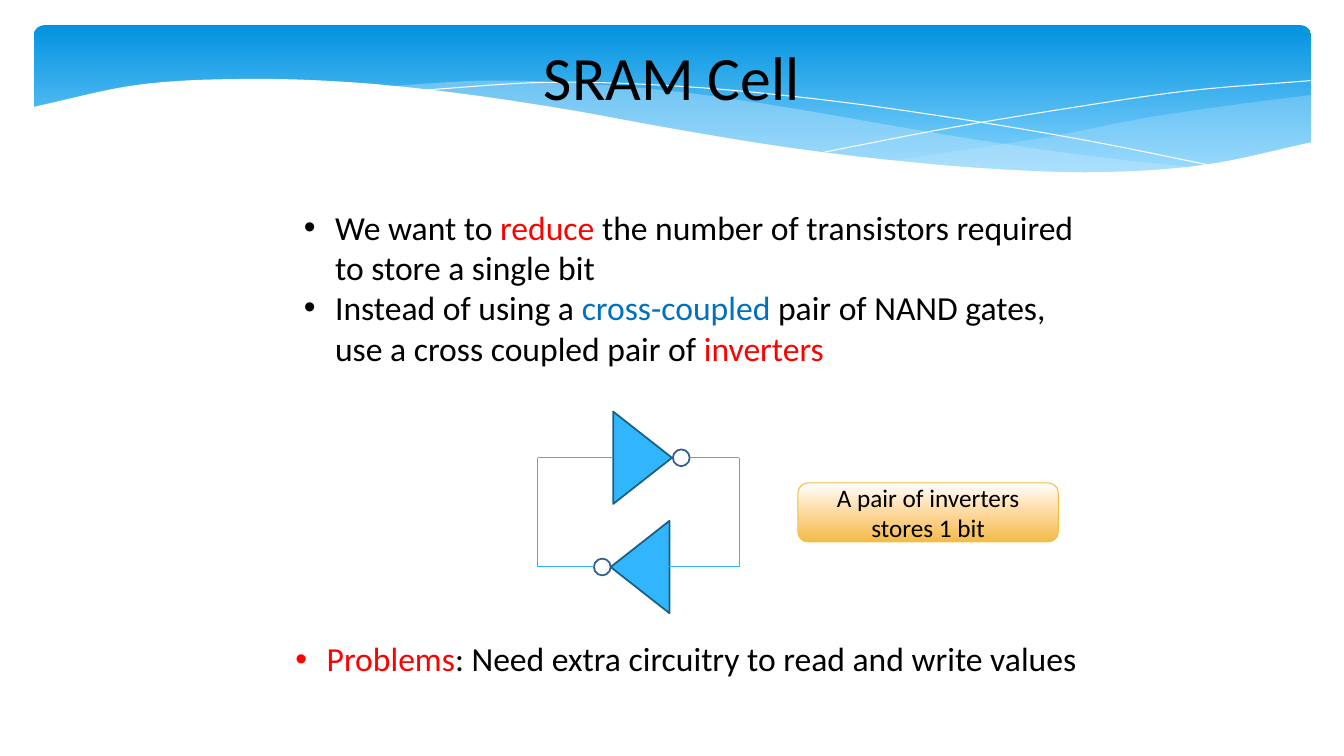
from lxml import etree
from pptx import Presentation
from pptx.dml.color import RGBColor
from pptx.enum.shapes import MSO_CONNECTOR, MSO_SHAPE
from pptx.enum.text import MSO_ANCHOR, MSO_AUTO_SIZE, PP_ALIGN
from pptx.oxml.ns import qn
from pptx.util import Emu, Inches, Pt

TRIANGLE = MSO_SHAPE.ISOSCELES_TRIANGLE
CIRCLE = MSO_SHAPE.OVAL
ROUNDED = MSO_SHAPE.ROUNDED_RECTANGLE
STRAIGHT = MSO_CONNECTOR.STRAIGHT
MIDDLE = MSO_ANCHOR.MIDDLE
TOP = MSO_ANCHOR.TOP
CENTER = PP_ALIGN.CENTER
LEFT = PP_ALIGN.LEFT
NO_AUTOFIT = MSO_AUTO_SIZE.NONE

COLUMNS, ROWS = 160, 90
CELL = Inches(1 / 12)
FONT = "Calibri"
BULLET_INDENT = Inches(0.31)
CURVE_STEPS = 8
COLORS = {
    "black": "000000", "white": "FFFFFF", "red": "FF0000", "blue": "0070C0",
    "sky": "31B6FD", "sky edge": "195F84", "bubble edge": "315D95",
    "mist": "C6E7FC", "band top": "0293E0", "band bottom": "83D3FE",
    "peach": "FFDDAA", "amber": "F4BB4A", "amber edge": "F5C040",
}


def cells(*counts):
    return [Emu(round(count * CELL)) for count in counts]


def color(name):
    return RGBColor.from_string(COLORS[name])


def set_attributes(target, formats):
    for name, value in formats.items():
        setattr(target, name, value)


def paint(shape, fill=None, line=None, width=0, opacity=100):
    shape.shadow.inherit = False
    if fill:
        shape.fill.solid()
        shape.fill.fore_color.rgb = color(fill)
        if opacity < 100:
            value = shape._element.spPr.find(qn("a:solidFill"))[0]
            etree.SubElement(value, qn("a:alpha"), val=str(opacity * 1000))
    else:
        shape.fill.background()
    if line:
        shape.line.width = Pt(width)
        shape.line.color.rgb = color(line)
    else:
        shape.line.fill.background()


def paint_gradient(shape, stops):
    shape.fill.gradient()
    gradient = shape._element.spPr.find(qn("a:gradFill"))
    for child in list(gradient):
        gradient.remove(child)
    stop_list = etree.SubElement(gradient, qn("a:gsLst"))
    for position, name in stops:
        stop = etree.SubElement(stop_list, qn("a:gs"), pos=str(position * 1000))
        etree.SubElement(stop, qn("a:srgbClr"), val=COLORS[name])
    etree.SubElement(gradient, qn("a:lin"), ang="5400000", scaled="0")


def curve_points(first_column, last_column, heights):
    spacing = (last_column - first_column) / (len(heights) - 1)
    before_first = 2 * heights[0] - heights[1]
    after_last = 2 * heights[-1] - heights[-2]
    padded = [before_first, *heights, after_last]
    slopes = [(after - before) / 2 for before, after in zip(padded, padded[2:])]
    points = [(first_column, heights[0])]
    for index in range(len(heights) - 1):
        start, end = heights[index:index + 2]
        start_slope, end_slope = slopes[index:index + 2]
        for step in range(1, CURVE_STEPS + 1):
            t = step / CURVE_STEPS
            blend = t * t * (3 - 2 * t)
            bend = t * (1 - t) * ((1 - t) * start_slope - t * end_slope)
            row = start + (end - start) * blend + bend
            points.append((first_column + (index + t) * spacing, row))
    return points


def add_outline(slide, points, closed, **look):
    corners = [cells(*point) for point in points]
    builder = slide.shapes.build_freeform(*corners[0])
    builder.add_line_segments(corners[1:], close=closed)
    paint(builder.convert_to_shape(), **look)


def add_wave(slide, first_column, last_column, upper, lower, **look):
    top_edge = curve_points(first_column, last_column, upper)
    bottom_edge = curve_points(first_column, last_column, lower)
    add_outline(slide, top_edge + bottom_edge[::-1], True, **look)


def add_hairline(slide, first_column, last_column, heights):
    add_outline(slide, curve_points(first_column, last_column, heights), False, line="white")


def add_preset(slide, kind, box, rotation=0, **look):
    shape = slide.shapes.add_shape(kind, *cells(*box))
    shape.rotation = rotation
    paint(shape, **look)
    return shape


def add_wire(slide, start, end):
    wire = slide.shapes.add_connector(STRAIGHT, *cells(*start, *end))
    wire.line.width = Pt(0.75)
    wire.line.color.rgb = color("sky")
    etree.SubElement(wire._element.spPr, qn("a:effectLst"))


def write_paragraph(paragraph, lines, size, alignment):
    paragraph.alignment = alignment
    for index, line in enumerate(lines):
        if index:
            paragraph.add_line_break()
        for text, color_name in line:
            run = paragraph.add_run()
            run.text = text
            set_attributes(run.font, {"name": FONT, "size": Pt(size)})
            run.font.color.rgb = color(color_name)


def add_bullets(slide, box, items):
    frame = slide.shapes.add_textbox(*cells(*box)).text_frame
    frame.word_wrap = True
    for index, lines in enumerate(items):
        paragraph = frame.add_paragraph() if index else frame.paragraphs[0]
        write_paragraph(paragraph, lines, 24, LEFT)
        properties = paragraph._p.get_or_add_pPr()
        properties.set("marL", str(BULLET_INDENT))
        properties.set("indent", str(-BULLET_INDENT))
        etree.SubElement(properties, qn("a:buFont"), typeface="Arial")
        etree.SubElement(properties, qn("a:buChar"), char="•")


def add_banner(slide):
    band = add_preset(slide, ROUNDED, (4, 3, 152.1, 18.7))
    band.adjustments[0] = 0.07
    paint_gradient(band, [(0, "band top"), (90, "band bottom")])
    add_wave(slide, 105.8, 156.1, upper=[19.2, 17.7, 16.1, 14.1, 12.6, 11.3],
             lower=[19.2, 20.2, 20.6, 20.5, 19.5, 17], fill="mist", opacity=29)
    add_wave(slide, 45.8, 142.8, upper=[10.3, 9.6, 10, 11.1, 12.9, 15, 17, 18.7, 20],
             lower=[10.3, 11.8, 13.6, 15.7, 17.8, 19.3, 20.3, 20.7, 20],
             fill="mist", opacity=40)
    add_hairline(slide, 49.4, 145.2, [10.8, 9.8, 10.3, 11.8, 14, 16.7, 19.9])
    add_hairline(slide, 98.2, 156, [18.1, 15.3, 12.9, 10.8, 9.6])
    add_wave(slide, 3.7, 156.3, lower=[26.9, 26.9], fill="white",
             upper=[12.8, 10.1, 9.4, 9.8, 11.1, 13, 15.3, 17.4, 19, 20.1, 20.5, 19.6, 16.9])


def place_title(slide, box, text):
    title = slide.shapes.title
    set_attributes(title, dict(zip(("left", "top", "width", "height"), cells(*box))))
    frame = title.text_frame
    set_attributes(frame, {"auto_size": NO_AUTOFIT, "word_wrap": True, "vertical_anchor": TOP})
    write_paragraph(frame.paragraphs[0], [[(text, "black")]], 44, CENTER)
    title._element.getparent().append(title._element)


def add_inverter(slide, triangle_left, bubble_left, row, rotation):
    add_preset(slide, TRIANGLE, (triangle_left, row - 3.5, 11, 7), rotation,
               fill="sky", line="sky edge", width=1.25)
    add_preset(slide, CIRCLE, (bubble_left, row - 1, 2, 2),
               fill="white", line="bubble edge", width=1.25)


def add_inverter_loop(slide):
    left, right, upper, lower = 64, 88, 54.5, 67.5
    add_inverter(slide, 71, 80.1, upper, rotation=90)
    add_inverter(slide, 70.7, 70.7, lower, rotation=270)
    left_route = [(70.7, lower), (left, lower), (left, upper), (73, upper)]
    right_route = [(82.1, upper), (right, upper), (right, lower), (79.7, lower)]
    for route in (left_route, right_route):
        for start, end in zip(route, route[1:]):
            add_wire(slide, start, end)


def add_label(slide, box, text):
    label = add_preset(slide, ROUNDED, box, line="amber edge", width=0.75)
    paint_gradient(label, [(0, "white"), (44, "peach"), (100, "amber")])
    set_attributes(label.text_frame, {"word_wrap": True, "vertical_anchor": MIDDLE})
    write_paragraph(label.text_frame.paragraphs[0], [[(text, "black")]], 18, CENTER)


def main():
    presentation = Presentation()
    set_attributes(presentation, {"slide_width": COLUMNS * CELL, "slide_height": ROWS * CELL})
    slide = presentation.slides.add_slide(presentation.slide_layouts.get_by_name("Title Only"))
    add_banner(slide)
    place_title(slide, (23, 4, 114, 10), "SRAM Cell")
    goal = [[("We want to ", "black"), ("reduce", "red"),
             (" the number of transistors required ", "black")],
            [("to store a single bit", "black")]]
    method = [[("Instead of using a ", "black"), ("cross-coupled", "blue"),
               (" pair of NAND gates,", "black")],
              [("use a cross coupled pair of ", "black"), ("inverters", "red")]]
    problems = [[("Problems", "red"),
                 (": Need extra circuitry to read and write values", "black")]]
    add_bullets(slide, (35, 24, 99.4, 20.6), [goal, method])
    add_inverter_loop(slide)
    add_label(slide, (95, 57.5, 31, 7), "A pair of inverters stores 1 bit")
    add_bullets(slide, (34, 75.4, 99.8, 6), [problems])
    presentation.save("out.pptx")


if __name__ == "__main__":
    main()
